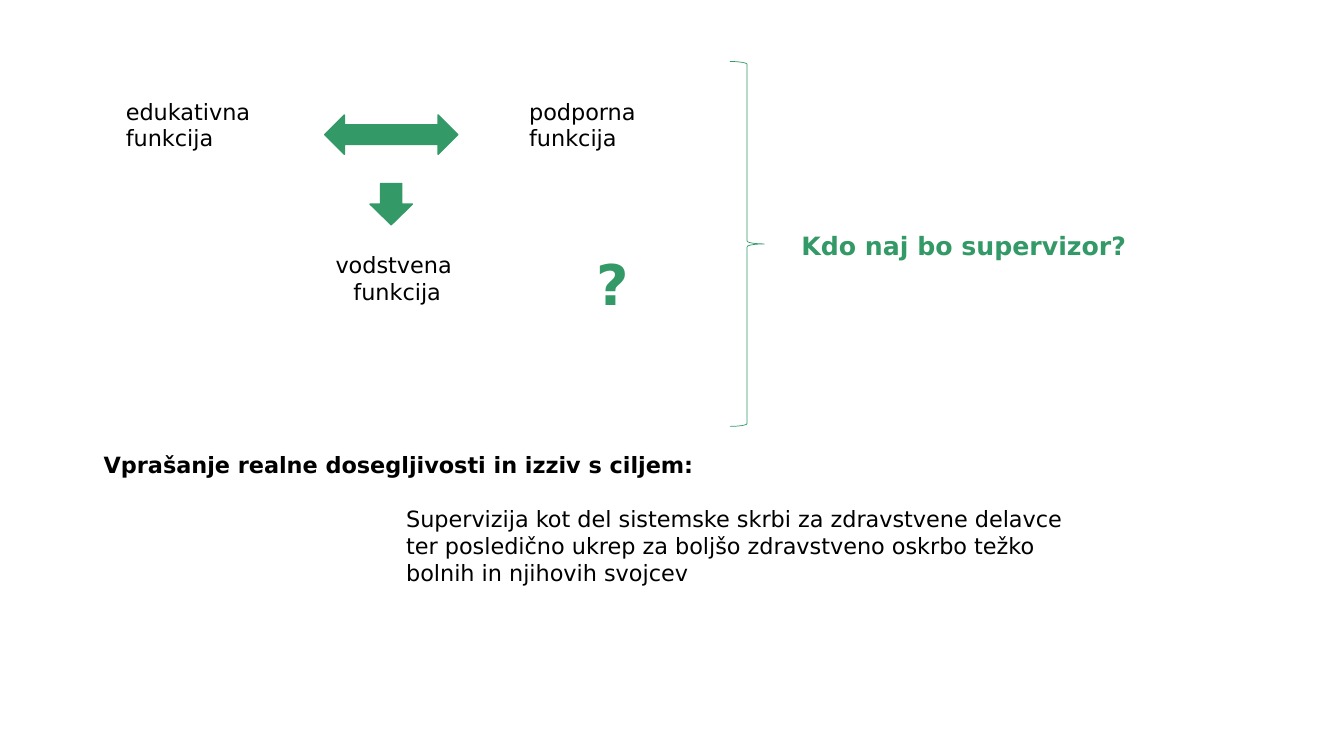
"""Build a slide on the three functions of supervision and who should supervise."""
from lxml import etree
from pptx import Presentation
from pptx import util as u
from pptx.dml.color import RGBColor
from pptx.enum import shapes, text
from pptx.oxml.ns import qn

GREEN = RGBColor(0x33, 0x99, 0x66)
BLACK = RGBColor(0, 0, 0)
FONT = "DejaVu Sans"
LEFT, MID = text.PP_ALIGN.LEFT, text.PP_ALIGN.CENTER
KIND = shapes.MSO_SHAPE

FORMS = [
    (KIND.LEFT_RIGHT_ARROW, (3.22, 1.14, 1.32, 0.39), True, 1),
    (KIND.DOWN_ARROW, (3.67, 1.82, 0.42, 0.41), True, 1),
    (KIND.RIGHT_BRACE, (7.24, 0.61, 0.34, 3.62), False, 0.5),
]
LABELS = [
    (["edukativna\tpodporna", "funkcija\tfunkcija"],
     (1.15, 0.92, 8.84, 0.64), 16, BLACK, False, LEFT, True),
    (["vodstvena ", "funkcija"],
     (3.22, 2.44, 1.44, 0.64), 16, BLACK, False, MID, False),
    (["?"], (5.82, 2.43, 0.7, 0.77), 40, GREEN, True, LEFT, True),
    (["Kdo naj bo supervizor?"],
     (7.85, 2.24, 3.46, 0.4), 18, GREEN, True, LEFT, False),
    (["Vprašanje realne dosegljivosti in izziv s ciljem:",
      "Supervizija kot del sistemske skrbi za zdravstvene delavce ter "
      "posledično ukrep za boljšo zdravstveno oskrbo težko bolnih in "
      "njihovih svojcev"],
     (0.93, 4.43, 9.89, 2.32), 16, BLACK, True, LEFT, True),
]
TAB = u.Inches(4)
INDENT = u.Inches(3)
GAP = u.Pt(19)


def draw(slide, kind, area, solid, width):
    form = slide.shapes.add_shape(kind, *map(u.Inches, area))
    form.shadow.inherit = False
    if solid:
        form.fill.solid()
        form.fill.fore_color.rgb = GREEN
    else:
        form.fill.background()
    form.line.color.rgb = GREEN
    form.line.width = u.Pt(width)


def write(slide, lines, area, size, color, bold, align, wrap):
    frame = slide.shapes.add_textbox(*map(u.Inches, area)).text_frame
    frame.word_wrap = wrap
    frame.text = "\n".join(lines)
    for para in frame.paragraphs:
        para.alignment = align
        para.font.name = FONT
        para.font.size = u.Pt(size)
        para.font.bold = bold
        para.font.color.rgb = color
    return frame.paragraphs


def set_tab(para):
    props = para._p.get_or_add_pPr()
    stops = etree.Element(qn("a:tabLst"))
    etree.SubElement(stops, qn("a:tab"), pos=str(TAB), algn="l")
    props.find(qn("a:defRPr")).addprevious(stops)


def main():
    deck = Presentation()
    deck.slide_width, deck.slide_height = u.Inches(13.33), u.Inches(7.5)
    slide = deck.slides.add_slide(deck.slide_layouts[6])
    for form in FORMS:
        draw(slide, *form)
    blocks = [write(slide, *label) for label in LABELS]
    for para in blocks[0]:
        set_tab(para)
    goal = blocks[-1][1]
    goal.font.bold = False
    goal.space_before = GAP
    props = goal._p.get_or_add_pPr()
    props.set("marL", str(INDENT))
    props.set("indent", "0")
    deck.save("out.pptx")


if __name__ == "__main__":
    main()
